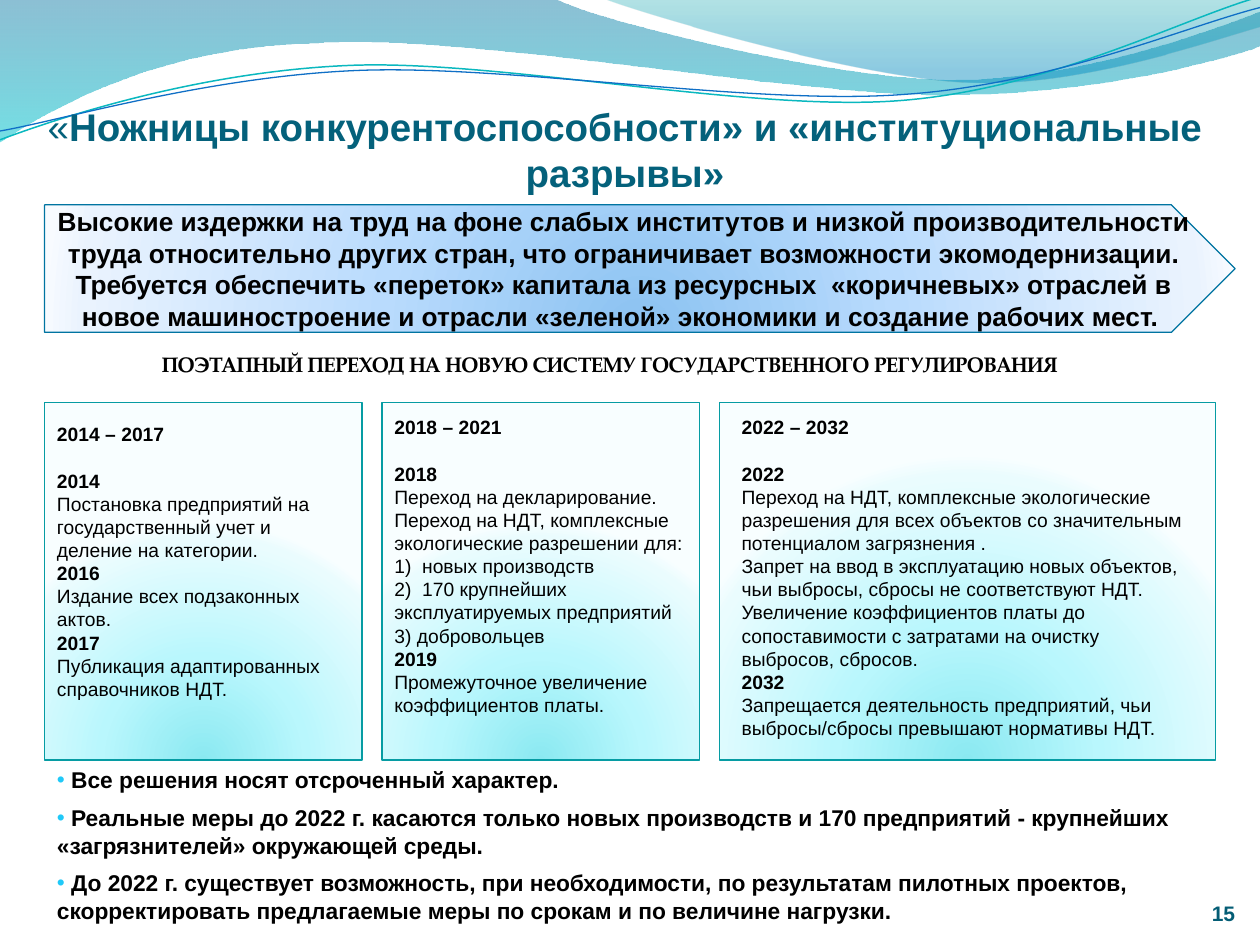
from lxml.etree import SubElement
from pptx import Presentation
from pptx.dml.color import RGBColor
from pptx.enum.shapes import MSO_SHAPE
from pptx.enum.text import MSO_ANCHOR, PP_ALIGN
from pptx.oxml.ns import qn
from pptx.util import Cm, Pt

BLACK = RGBColor(0x00, 0x00, 0x00)
TITLE_BLUE = RGBColor(0x04, 0x61, 0x7B)
NUMBER_BLUE = RGBColor(0x04, 0x5D, 0x75)
ARROW_BLUE = RGBColor(0x00, 0x74, 0xA1)
PANEL_TEAL = RGBColor(0x06, 0x9C, 0xA3)
BULLET_BLUE = RGBColor(0x20, 0xC9, 0xF8)
LINE_TEAL = RGBColor(0x0A, 0xB8, 0xBF)
LINE_BLUE = RGBColor(0x0F, 0x6F, 0xC6)


# Gradient stops: position %, colour, opacity %
def glow(*colours):
    return [(pos, RGBColor.from_string(c), 100) for pos, c in zip((0, 43, 93, 100), colours)]


PANEL_GLOW = glow("8BE9F1", "B9F7FD", "EAFCFE", "F8FEFF")
ARROW_GLOW = glow("8BC2F1", "B9DBFD", "EAF3FE", "F8FBFF")
WAVE_FADE = [(0, ARROW_BLUE, 45), (100, RGBColor(0x00, 0xC6, 0xCF), 55)]
CREST_FADE = [(0, RGBColor(0x00, 0xA1, 0xA9), 30), (80, RGBColor(0x00, 0x8B, 0xBF), 45)]

# Header curves in inches: a pair is a straight step, six numbers a Bezier step
WAVES = [
    (WAVE_FADE, [(0, 0), (4.4, -0.01), (4.76, 0.17, 6.64, 0.63, 7.58, 0.63),
                 (8.53, 0.63, 9.58, 0.26, 10, 0.09), (10.01, 0.36),
                 (9.83, 0.44, 8.7, 0.76, 7.46, 0.75), (6.22, 0.75, 3.82, 0.28, 2.57, 0.34),
                 (1.29, 0.36, 0.46, 0.83, -0.01, 1.13), (0, 0)]),
    (CREST_FADE, [(4.79, -0.01), (5.09, 0.11, 6.82, 0.62, 7.69, 0.65),
                  (8.56, 0.69, 9.61, 0.32, 10, 0.21), (10, 0), (4.79, -0.01)]),
]
WAVE_LINES = [
    (LINE_TEAL, 0.85, [(0, 1.11), (0.48, 0.93, 1.58, 0.57, 2.77, 0.52),
                       (3.95, 0.47, 5.93, 0.89, 7.13, 0.8), (8.33, 0.71, 9.38, 0.15, 9.98, -0.02)]),
    (LINE_BLUE, 0.75, [(0, 1.04), (0.47, 0.96, 1.64, 0.61, 2.83, 0.56),
                       (4.03, 0.51, 5.97, 0.84, 7.17, 0.75), (8.36, 0.67, 9.41, 0.21, 10, 0.06)]),
]

TITLE = [("«", False), ("Ножницы конкурентоспособности» и «институциональные разрывы»", True)]
THESIS = ("Высокие издержки на труд на фоне слабых институтов и низкой производительности труда "
          "относительно других стран, что ограничивает возможности экомодернизации. Требуется "
          "обеспечить «переток» капитала из ресурсных  «коричневых» отраслей в новое "
          "машиностроение и отрасли «зеленой» экономики и создание рабочих мест. ")
SUBTITLE = "ПОЭТАПНЫЙ ПЕРЕХОД НА НОВУЮ СИСТЕМУ ГОСУДАРСТВЕННОГО РЕГУЛИРОВАНИЯ"
# text_box: shift from the panel's left side, top, width, height; top_margin starts the text
STAGES = [
    {"panel_width": 6.4, "text_box": (0, 6.5, 6, 8.2), "top_margin": 2.02,
     "period": "2014 – 2017",
     "steps": [("2014", ["Постановка предприятий на государственный учет и деление на категории."]),
               ("2016", ["Издание всех подзаконных актов."]),
               ("2017", ["Публикация адаптированных справочников НДТ."])]},
    {"panel_width": 6.4, "text_box": (0, 6.81, 6.8, 8.2), "top_margin": 1.57,
     "period": "2018 – 2021",
     "steps": [("2018", ["Переход на декларирование.",
                         "Переход на НДТ, комплексные экологические разрешении для:",
                         "1)  новых производств",
                         "2)  170 крупнейших эксплуатируемых предприятий",
                         "3) добровольцев"]),
               ("2019", ["Промежуточное увеличение коэффициентов платы."])]},
    {"panel_width": 10, "text_box": (0.2, 6.81, 9.6, 8.25), "top_margin": 1.57,
     "period": "2022 – 2032",
     "steps": [("2022", ["Переход на НДТ, комплексные экологические разрешения для всех объектов "
                         "со значительным потенциалом загрязнения .",
                         "Запрет на ввод в эксплуатацию новых объектов, чьи выбросы, сбросы "
                         "не соответствуют НДТ.",
                         "Увеличение коэффициентов платы до сопоставимости с затратами "
                         "на очистку выбросов, сбросов."]),
               ("2032", ["Запрещается деятельность предприятий, чьи выбросы/сбросы превышают "
                         "нормативы НДТ."])]},
]
CONCLUSIONS = [
    " Все решения носят отсроченный характер.",
    " Реальные меры до 2022 г. касаются только новых производств и 170 предприятий - "
    "крупнейших «загрязнителей» окружающей среды.",
    " До 2022 г. существует возможность, при необходимости, по результатам пилотных проектов, "
    "скорректировать предлагаемые меры по срокам и по величине нагрузки.",
]
LEFT, PANEL_TOP, PANEL_HEIGHT, PANEL_GAP = 0.9, 8.12, 7.2, 0.4

prs = Presentation()
prs.slide_width, prs.slide_height = Cm(25.4), Cm(19.05)
slide = prs.slides.add_slide(prs.slide_layouts[6])


def set_gradient(shape, stops, radial=False):
    shape.fill.gradient()
    grad = shape.element.spPr.find(qn("a:gradFill"))
    for child in list(grad):
        grad.remove(child)
    stop_list = SubElement(grad, qn("a:gsLst"))
    for pos, colour, opacity in stops:
        stop = SubElement(stop_list, qn("a:gs"), pos=str(pos * 1000))
        clr = SubElement(stop, qn("a:srgbClr"), val=str(colour))
        if opacity < 100:
            SubElement(clr, qn("a:alpha"), val=str(opacity * 1000))
    if radial:
        centre = SubElement(grad, qn("a:path"), {"path": "circle"})
        SubElement(centre, qn("a:fillToRect"), l="50000", t="130000", r="50000", b="-30000")
    else:
        SubElement(grad, qn("a:lin"), ang="5400000", scaled="0")


def add_curve(steps, closed):
    """Lay out every point as a vertex, then join each Bezier step's three into one curve."""
    points = [(Cm(step[i] * 2.54), Cm(step[i + 1] * 2.54))
              for step in steps for i in range(0, len(step), 2)]
    builder = slide.shapes.build_freeform(*points[0], scale=1.0)
    builder.add_line_segments(points[1:], close=closed)
    curve = builder.convert_to_shape()
    curve.shadow.inherit = False
    vertices = iter(list(curve.element.spPr.iter(qn("a:lnTo"))))
    for step in steps[1:]:
        segment = next(vertices)
        if len(step) == 6:
            segment.addprevious(bezier := SubElement(segment.getparent(), qn("a:cubicBezTo")))
            for vertex in (segment, next(vertices), next(vertices)):
                bezier.append(vertex[0])
                vertex.getparent().remove(vertex)
    return curve


def add_filled_shape(kind, box, stops, line):
    shape = slide.shapes.add_shape(kind, *map(Cm, box))
    shape.shadow.inherit = False
    set_gradient(shape, stops, radial=True)
    shape.line.color.rgb = line
    shape.line.width = Pt(0.75)
    return shape


def add_text_box(box, **frame_format):
    frame = slide.shapes.add_textbox(*map(Cm, box)).text_frame
    for name, value in {"word_wrap": True, **frame_format}.items():
        setattr(frame, name, value)
    return frame


def write(frame, paragraphs, size, colour=BLACK, font="Arial", **paragraph_format):
    """Each paragraph is a list of (text, bold) runs."""
    for i, runs in enumerate(paragraphs):
        paragraph = frame.add_paragraph() if i else frame.paragraphs[0]
        for name, value in paragraph_format.items():
            setattr(paragraph, name, value)
        for text, bold in runs:
            run = paragraph.add_run()
            run.text = text
            for name, value in {"size": Pt(size), "name": font, "bold": bold}.items():
                setattr(run.font, name, value)
            run.font.color.rgb = colour


# Header waves
for stops, steps in WAVES:
    wave = add_curve(steps, closed=True)
    set_gradient(wave, stops)
    wave.line.fill.background()
for colour, width, steps in WAVE_LINES:
    wave_line = add_curve(steps, closed=False)
    wave_line.fill.background()
    wave_line.line.color.rgb = colour
    wave_line.line.width = Pt(width)

# Stage panels, left to right
panel_lefts = []
panel_left = LEFT
for stage in STAGES:
    panel_lefts.append(panel_left)
    add_filled_shape(MSO_SHAPE.RECTANGLE, (panel_left, PANEL_TOP, stage["panel_width"], PANEL_HEIGHT),
                     PANEL_GLOW, PANEL_TEAL)
    panel_left += stage["panel_width"] + PANEL_GAP

# Title, page number and subtitle
no_margins = {f"margin_{side}": 0 for side in ("left", "top", "right", "bottom")}
title = add_text_box((0.7, 1.12, 23.8, 2.82), vertical_anchor=MSO_ANCHOR.BOTTOM, **no_margins)
write(title, [TITLE], 22, TITLE_BLUE, alignment=PP_ALIGN.CENTER)
page_number = add_text_box((22, 17.65, 2.9, 1.02), vertical_anchor=MSO_ANCHOR.BOTTOM, **no_margins)
write(page_number, [[("15", True)]], 12, NUMBER_BLUE, alignment=PP_ALIGN.RIGHT)
subtitle = add_text_box((0.5, 5.41, 23.6, 2.31), vertical_anchor=MSO_ANCHOR.BOTTOM)
write(subtitle, [[(SUBTITLE, True)]], 12, font="TeX Gyre Pagella", alignment=PP_ALIGN.CENTER)

# Stage texts
for panel_left, stage in zip(panel_lefts, STAGES):
    shift, *rest = stage["text_box"]
    stage_text = add_text_box((panel_left + shift, *rest), margin_top=Cm(stage["top_margin"]))
    lines = [[(stage["period"], True)]]
    for year, measures in stage["steps"]:
        lines += [[(year, True)]] + [[(measure, False)] for measure in measures]
    write(stage_text, lines, 11)
    stage_text.paragraphs[0].space_after = Pt(13.3)

# Conclusions
conclusions = add_text_box((LEFT, 15.31, 23.6, 3.45), vertical_anchor=MSO_ANCHOR.MIDDLE)
write(conclusions, [[(text, True)] for text in CONCLUSIONS], 13, space_before=Pt(6))
for paragraph in conclusions.paragraphs:
    props = paragraph._p.get_or_add_pPr()
    bullet_colour = SubElement(props, qn("a:buClr"))
    SubElement(bullet_colour, qn("a:srgbClr"), val=str(BULLET_BLUE))
    SubElement(props, qn("a:buFont"), typeface="Arial")
    SubElement(props, qn("a:buChar"), char="•")

# Thesis arrow
thesis = add_filled_shape(MSO_SHAPE.PENTAGON, (LEFT, 4.13, 24, 2.57), ARROW_GLOW, ARROW_BLUE)
thesis.text_frame.word_wrap = True
thesis.text_frame.vertical_anchor = MSO_ANCHOR.MIDDLE
write(thesis.text_frame, [[(THESIS, True)]], 15, alignment=PP_ALIGN.CENTER)

prs.save("out.pptx")
